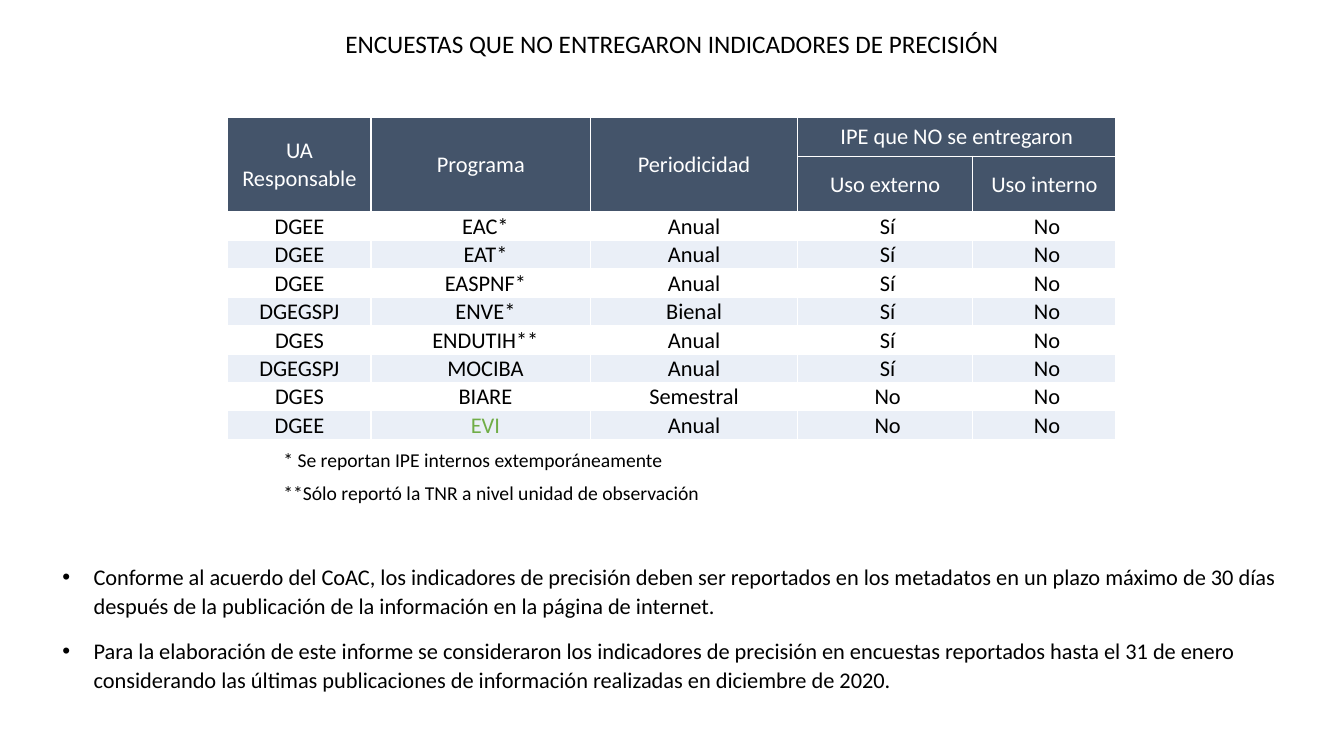
from pptx import Presentation
from pptx import util as u
from pptx.dml.color import RGBColor
from pptx.enum import text
from pptx.oxml import parse_xml
from pptx.oxml.ns import nsdecls

TITLE = "ENCUESTAS QUE NO ENTREGARON INDICADORES DE PRECISIÓN"
HEADER = [
    ["UA Responsable", "Programa", "Periodicidad", "IPE que NO se entregaron", ""],
    ["", "", "", "Uso externo", "Uso interno"],
]
SURVEYS = [
    ["DGEE", "EAC*", "Anual", "Sí", "No"],
    ["DGEE", "EAT*", "Anual", "Sí", "No"],
    ["DGEE", "EASPNF*", "Anual", "Sí", "No"],
    ["DGEGSPJ", "ENVE*", "Bienal", "Sí", "No"],
    ["DGES", "ENDUTIH**", "Anual", "Sí", "No"],
    ["DGEGSPJ", "MOCIBA", "Anual", "Sí", "No"],
    ["DGES", "BIARE", "Semestral", "No", "No"],
    ["DGEE", "EVI", "Anual", "No", "No"],
]
FOOTNOTES = [
    ["* Se reportan IPE internos extemporáneamente"],
    ["**Sólo reportó la TNR a nivel unidad de observación"],
]
REMARKS = [
    "Conforme al acuerdo del CoAC, los indicadores de precisión deben ser reportados en los "
    "metadatos en un plazo máximo de 30 días después de la publicación de la información en "
    "la página de internet.",
    "Para la elaboración de este informe se consideraron los indicadores de precisión en "
    "encuestas reportados hasta el 31 de enero considerando las últimas publicaciones de "
    "información realizadas en diciembre de 2020.",
]
COLORS = {"text": "000000", "header": "44546A", "white": "FFFFFF",
          "band": "EAEFF7", "highlight": "70AD47"}
WIDTH, HEIGHT = 13.33, 7.5
SURVEY_COLUMNS = [1.42, 2.18, 2.05, 1.74, 1.42]
SURVEY_ROWS = [0.39, 0.55] + [0.28] * len(SURVEYS)
LEFT_INSETS = [0.01, 0.1, 0.01, 0.06, 0.06]
CENTER = text.PP_ALIGN.CENTER
LEFT = text.PP_ALIGN.LEFT


def write(paragraph, content, size=16, color="text", align=LEFT):
    paragraph.alignment = align
    run = paragraph.add_run()
    run.text = content
    run.font.name = "Calibri"
    run.font.size = u.Pt(size)
    run.font.color.rgb = RGBColor.from_string(COLORS[color])


def add_text_box(slide, left, top, width, height):
    frame = slide.shapes.add_textbox(*map(u.Inches, (left, top, width, height))).text_frame
    frame.word_wrap = True
    return frame


def add_grid(slide, left, top, columns, rows):
    """Add a table with the given column widths and row heights."""
    frame = slide.shapes.add_table(len(rows), len(columns), u.Inches(left), u.Inches(top),
                                   u.Inches(sum(columns)), u.Inches(sum(rows)))
    table = frame.table
    table.first_row = table.horz_banding = False
    for column, width in zip(table.columns, columns):
        column.width = u.Inches(width)
    for row, height in zip(table.rows, rows):
        row.height = u.Inches(height)
    return table


def fill_cell(cell, content, fill=None, left_inset=0.01, **style):
    cell.margin_left = u.Inches(left_inset)
    cell.margin_right = cell.margin_top = u.Inches(0.01)
    cell.margin_bottom = 0
    cell.vertical_anchor = text.MSO_ANCHOR.MIDDLE
    properties = cell._tc.get_or_add_tcPr()
    for side in ("lnL", "lnR", "lnT", "lnB"):
        properties.append(parse_xml(
            f'<a:{side} {nsdecls("a")} w="12700"><a:solidFill>'
            f'<a:srgbClr val="{COLORS["white"]}"/></a:solidFill></a:{side}>'))
    if fill:
        cell.fill.solid()
        cell.fill.fore_color.rgb = RGBColor.from_string(COLORS[fill])
    else:
        cell.fill.background()
    if content:
        write(cell.text_frame.paragraphs[0], content, **style)


def add_survey_table(slide):
    table = add_grid(slide, 2.26, 1.16, SURVEY_COLUMNS, SURVEY_ROWS)
    for r, row in enumerate(HEADER):
        for c, content in enumerate(row):
            fill_cell(table.cell(r, c), content, fill="header", color="white", align=CENTER)
    for c in range(3):
        table.cell(0, c).merge(table.cell(1, c))
    table.cell(0, 3).merge(table.cell(0, 4))
    for r, row in enumerate(SURVEYS):
        for c, content in enumerate(row):
            fill_cell(table.cell(r + len(HEADER), c), content,
                      fill="band" if r % 2 else None, left_inset=LEFT_INSETS[c],
                      color="highlight" if content == "EVI" else "text", align=CENTER)


def add_remarks(slide):
    frame = add_text_box(slide, 0.52, 5.52, 12.47, 1.41)
    for i, remark in enumerate(REMARKS):
        paragraph = frame.add_paragraph() if i else frame.paragraphs[0]
        write(paragraph, remark)
        paragraph.line_spacing = 1.07
        paragraph.space_before = paragraph.space_after = u.Pt(6)
        properties = paragraph._p.get_or_add_pPr()
        properties.set("marL", str(u.Inches(0.31)))
        properties.set("indent", str(-u.Inches(0.31)))
        properties.append(parse_xml(f'<a:buFont {nsdecls("a")} typeface="Arial"/>'))
        properties.append(parse_xml(f'<a:buChar {nsdecls("a")} char="•"/>'))


def main():
    presentation = Presentation()
    presentation.slide_width = u.Inches(WIDTH)
    presentation.slide_height = u.Inches(HEIGHT)
    slide = presentation.slides.add_slide(presentation.slide_layouts[6])
    add_survey_table(slide)
    footnote_table = add_grid(slide, 2.8, 4.41, [5.02], [0.32] * len(FOOTNOTES))
    for r, (note,) in enumerate(FOOTNOTES):
        fill_cell(footnote_table.cell(r, 0), note, size=14)
    title = add_text_box(slide, 0, 0.23, WIDTH, 0.4)
    write(title.paragraphs[0], TITLE, size=18, align=CENTER)
    add_remarks(slide)
    presentation.save("out.pptx")


if __name__ == "__main__":
    main()
